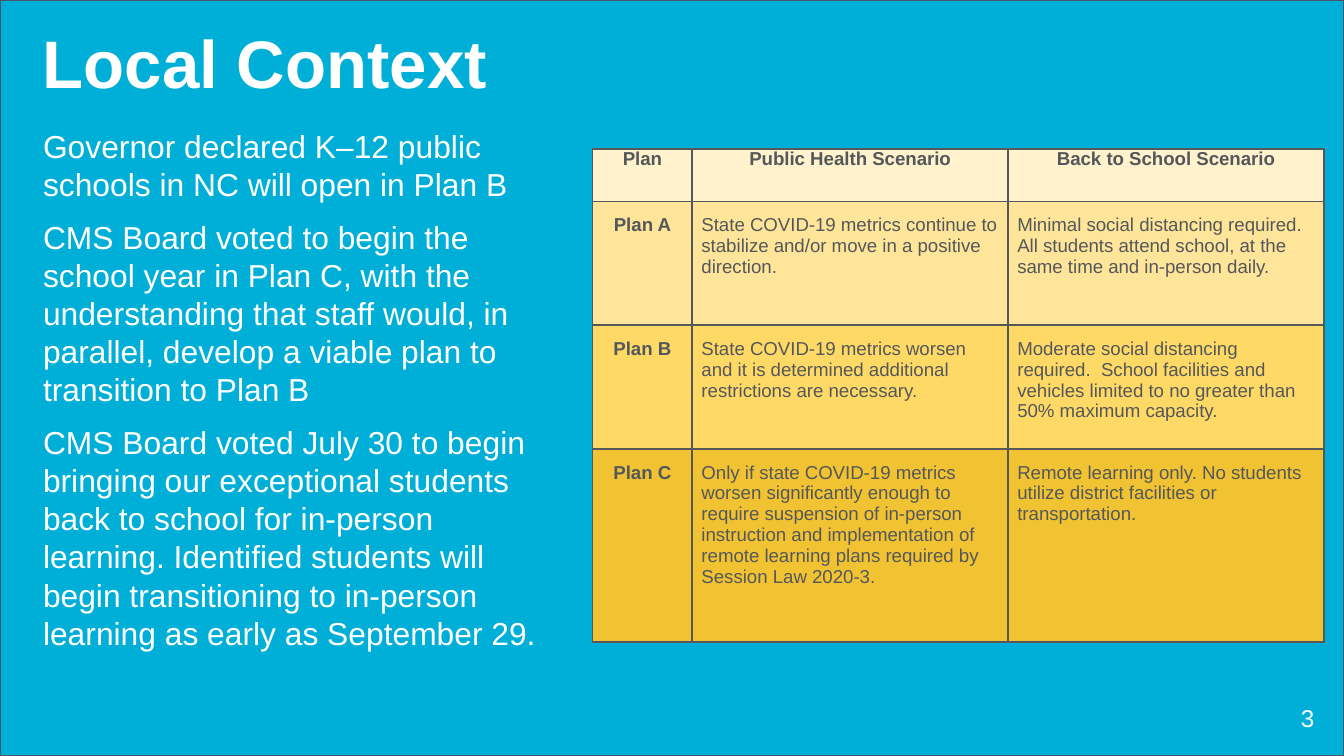
from lxml import etree
from pptx import Presentation
from pptx.dml.color import RGBColor
from pptx.enum import shapes, text
from pptx.oxml import ns
from pptx.util import Inches, Pt

BLUE = RGBColor(0x00, 0xAF, 0xD7)
SLATE = RGBColor(0x44, 0x54, 0x6A)
GRAY = RGBColor(0x54, 0x58, 0x5A)
WHITE = RGBColor(0xFF, 0xFF, 0xFF)
ROW_FILLS = [
    RGBColor(0xFF, 0xF2, 0xCC),
    RGBColor(0xFF, 0xE5, 0x99),
    RGBColor(0xFF, 0xD9, 0x66),
    RGBColor(0xF1, 0xC2, 0x32),
]

CONTEXT = [
    "Governor declared K–12 public schools in NC will open in Plan B",
    "CMS Board voted to begin the school year in Plan C, with the understanding "
    "that staff would, in parallel, develop a viable plan to transition to Plan B",
    "CMS Board voted July 30 to begin bringing our exceptional students back to "
    "school for in-person learning. Identified students will begin transitioning "
    "to in-person learning as early as September 29.",
]
PLANS = [
    ["Plan", "Public Health Scenario", "Back to School Scenario"],
    ["Plan A",
     "State COVID-19 metrics continue to stabilize and/or move in a positive direction.",
     "Minimal social distancing required.  All students attend school, at the same "
     "time and in-person daily."],
    ["Plan B",
     "State COVID-19 metrics worsen\nand it is determined additional restrictions "
     "are necessary.",
     "Moderate social distancing required.  School facilities and vehicles limited "
     "to no greater than 50% maximum capacity."],
    ["Plan C",
     "Only if state COVID-19 metrics worsen significantly enough to require "
     "suspension of in-person instruction and implementation of remote learning "
     "plans required by Session Law 2020-3.",
     "Remote learning only. No students utilize district facilities or transportation."],
]
COLUMN_WIDTHS = [0.74, 2.35, 2.35]
ROW_HEIGHTS = [0.39, 0.92, 0.92, 1.44]


class SlideBuilder:
    font_name = "Arial"
    side_inset = Inches(0.07)
    end_inset = Inches(0.04)
    space_before = Pt(8)

    def __init__(self, page):
        self.page = page

    def style(self, para, size, color, bold=False, align=text.PP_ALIGN.LEFT):
        para.alignment = align
        font = para.font
        font.name, font.size, font.bold = self.font_name, Pt(size), bold
        font.color.rgb = color

    def backdrop(self, width, height):
        panel = self.page.shapes.add_shape(
            shapes.MSO_SHAPE.RECTANGLE, 0, 0, width, height)
        panel.shadow.inherit = False
        panel.fill.solid()
        panel.fill.fore_color.rgb = BLUE
        panel.line.color.rgb = SLATE
        panel.line.width = Pt(0.75)

    def text_box(self, place, paragraphs, size, line_spacing=1.0,
                 anchor=text.MSO_ANCHOR.TOP, **style):
        box = self.page.shapes.add_textbox(*map(Inches, place))
        frame = box.text_frame
        frame.word_wrap = True
        frame.vertical_anchor = anchor
        frame.margin_left = frame.margin_right = self.side_inset
        frame.margin_top = frame.margin_bottom = self.end_inset
        for index, words in enumerate(paragraphs):
            para = frame.add_paragraph() if index else frame.paragraphs[0]
            para.text = words
            para.line_spacing = line_spacing
            para.space_before = self.space_before if index else Pt(0)
            self.style(para, size, WHITE, **style)

    def table(self, left, top, rows, widths, heights, fills):
        table = self.page.shapes.add_table(
            len(rows), len(widths), Inches(left), Inches(top),
            Inches(sum(widths)), Inches(sum(heights))).table
        for column, width in zip(table.columns, widths):
            column.width = Inches(width)
        for row, height in zip(table.rows, heights):
            row.height = Inches(height)
        for i, row in enumerate(rows):
            for j, words in enumerate(row):
                self.cell(table.cell(i, j), words, fills[i], i == 0, j == 0)

    def cell(self, cell, words, fill, is_header, is_label):
        heading = is_header or is_label
        cell.margin_left = cell.margin_right = self.side_inset
        cell.margin_top = Inches(0 if is_header else 0.1)
        cell.margin_bottom = Inches(0.1)
        para = cell.text_frame.paragraphs[0]
        para.text = words
        para.space_before = self.space_before
        align = text.PP_ALIGN.CENTER if heading else text.PP_ALIGN.LEFT
        self.style(para, 10, GRAY, heading, align)
        self.borders(cell)
        cell.fill.solid()
        cell.fill.fore_color.rgb = fill

    def borders(self, cell):
        """Draw all four edges; these must come before the cell's fill."""
        properties = cell._tc.get_or_add_tcPr()
        for edge in ("lnL", "lnR", "lnT", "lnB"):
            line = etree.SubElement(properties, ns.qn(f"a:{edge}"), w=str(Pt(1)))
            solid = etree.SubElement(line, ns.qn("a:solidFill"))
            etree.SubElement(solid, ns.qn("a:srgbClr"), val=str(GRAY))


def main():
    deck = Presentation()
    deck.slide_width = Inches(10)
    deck.slide_height = deck.slide_width * 9 // 16
    builder = SlideBuilder(deck.slides.add_slide(deck.slide_layouts[6]))
    builder.backdrop(deck.slide_width, deck.slide_height)
    builder.text_box((0.25, 0.25, 9, 0.5), ["Local Context"], 36, line_spacing=0.9,
                     anchor=text.MSO_ANCHOR.MIDDLE, bold=True)
    builder.text_box((0.25, 0.9, 4.01, 4.25), CONTEXT, 17)
    builder.text_box((9.25, 5.19, 0.6, 0.43), ["3"], 13, align=text.PP_ALIGN.RIGHT)
    builder.table(4.41, 1.11, PLANS, COLUMN_WIDTHS, ROW_HEIGHTS, ROW_FILLS)
    deck.save("out.pptx")


if __name__ == "__main__":
    main()
